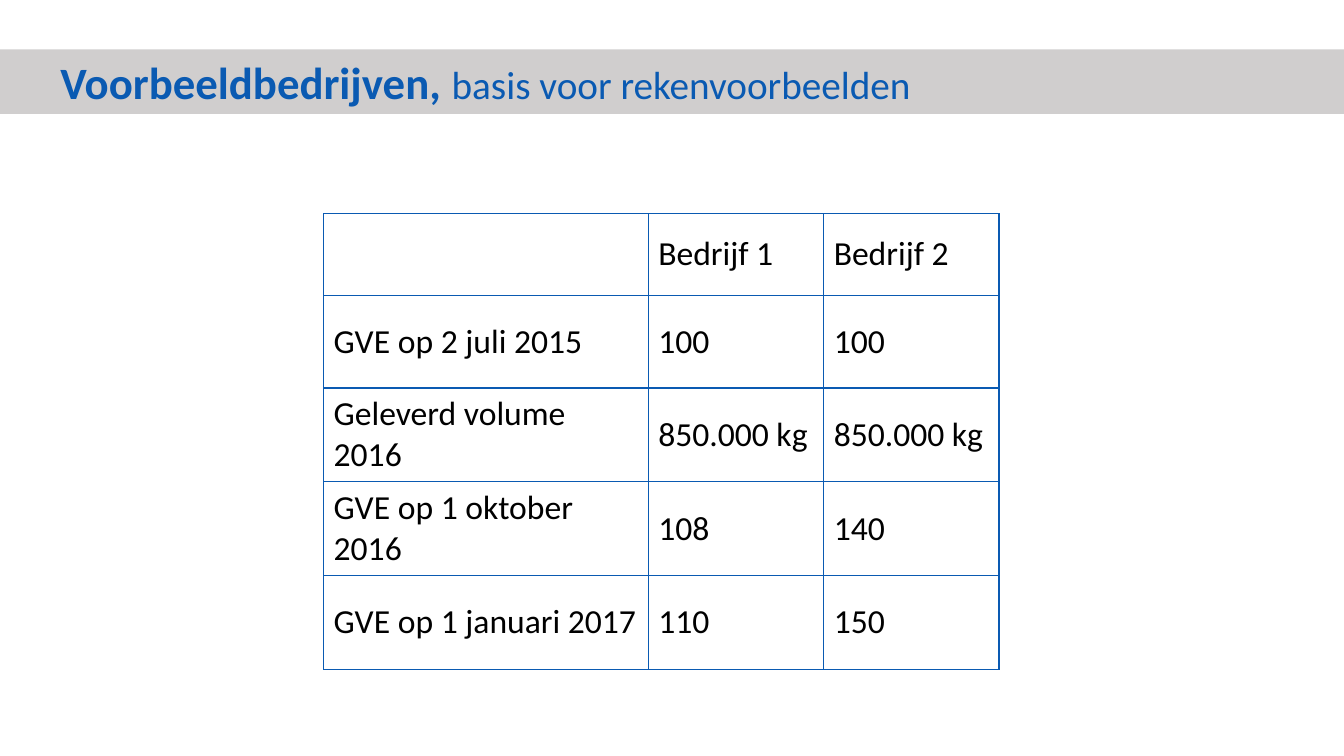
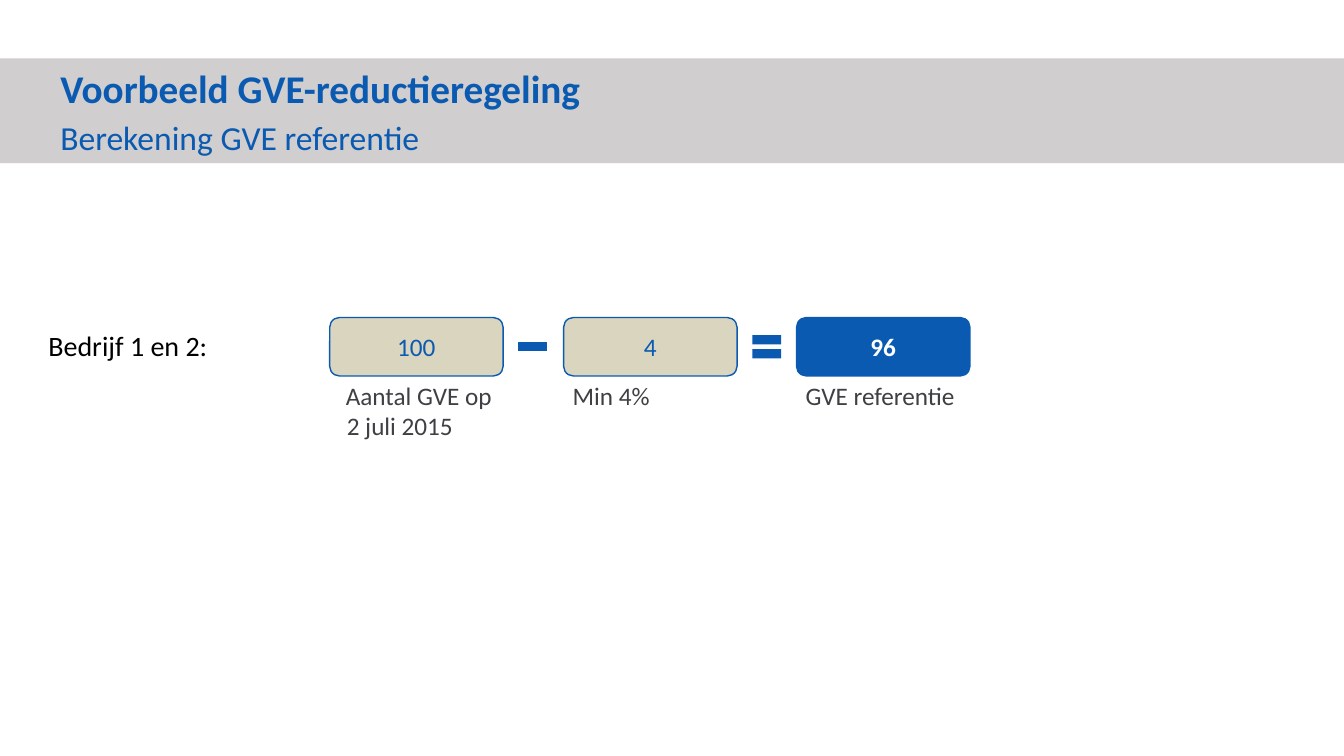
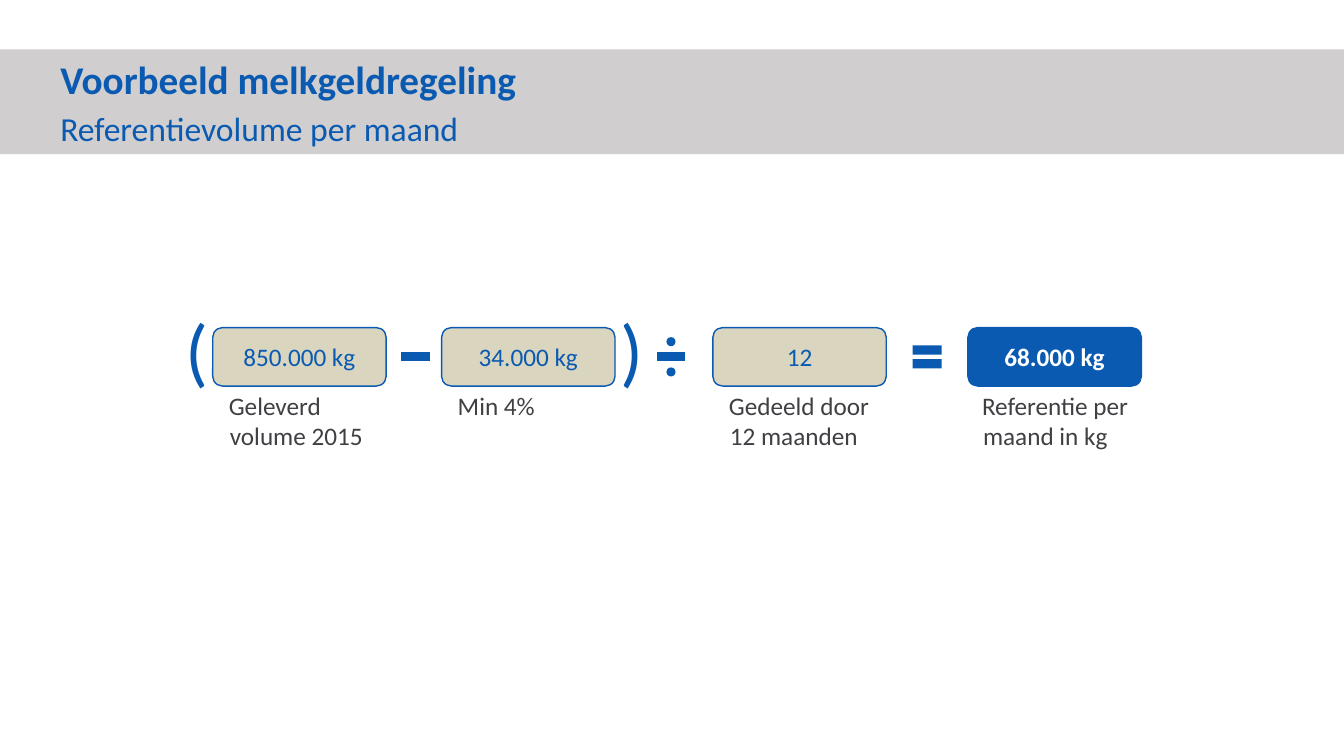
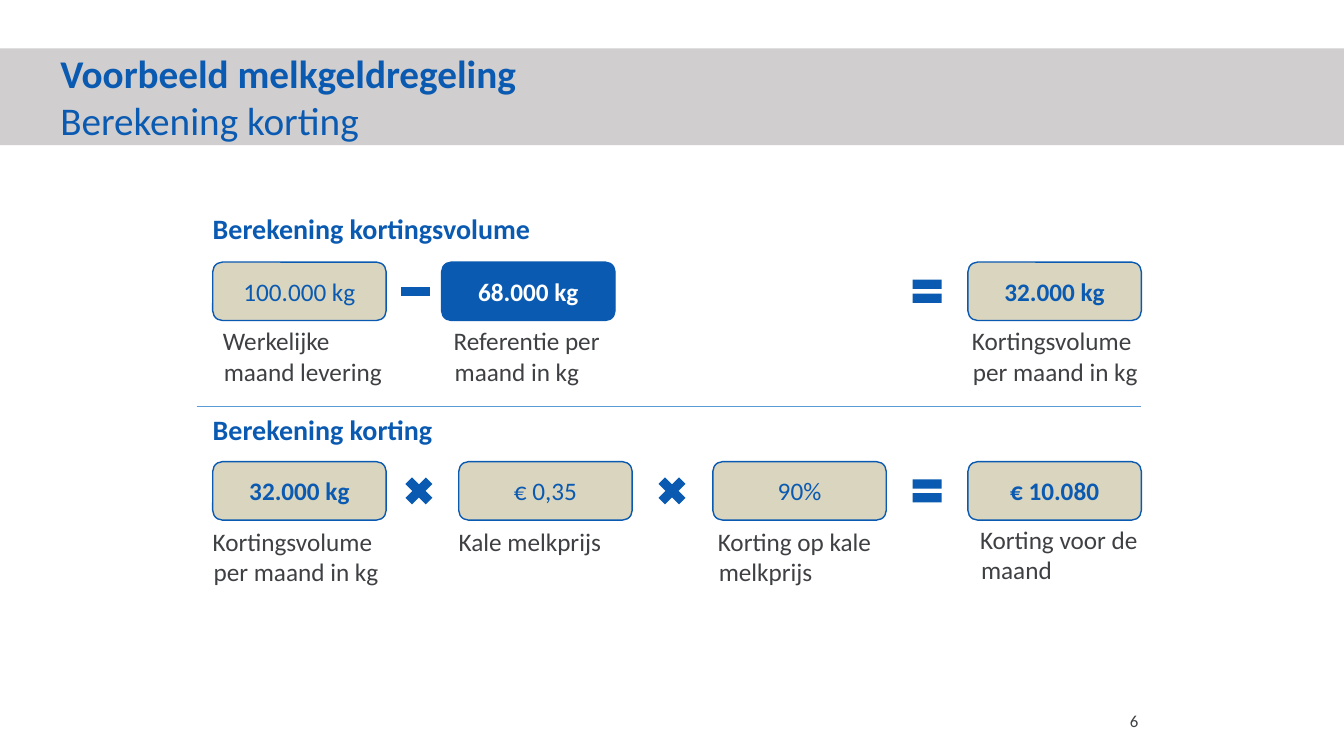
from dataclasses import dataclass

from lxml.etree import SubElement
from pptx import Presentation
from pptx.dml.color import RGBColor
from pptx.enum.shapes import MSO_CONNECTOR, MSO_SHAPE
from pptx.enum.text import MSO_ANCHOR, PP_ALIGN
from pptx.oxml import parse_xml
from pptx.oxml.ns import nsdecls, qn
from pptx.util import Inches, Pt

BLUE = RGBColor(0x0A, 0x5A, 0xB2)
SAND = RGBColor(0xD9, 0xD5, 0xBF)
BAND_GREY = RGBColor(0xD0, 0xCE, 0xCE)
CAPTION_GREY = RGBColor(0x3F, 0x40, 0x43)
DIVIDER_BLUE = RGBColor(0x5B, 0x9B, 0xD5)
BLACK = RGBColor(0, 0, 0)
WHITE = RGBColor(0xFF, 0xFF, 0xFF)
FONT = "Calibri"

SLIDE_WIDTH = 13.33
SLIDE_HEIGHT = 7.5
TERM_WIDTH = 1.72
TERM_HEIGHT = 0.58
SIGN_SIZE = 0.39
SIGN_DROP = (TERM_HEIGHT - SIGN_SIZE) / 2
DOT_SIZE = 0.09
COLUMN_1, COLUMN_2, COLUMN_3, COLUMN_4 = 2.11, 4.38, 7.07, 9.6
EQUALS_LEFT = 9

COMPANY_ROWS = [
    ("", "Bedrijf 1", "Bedrijf 2"),
    ("GVE op 2 juli 2015", "100", "100"),
    ("Geleverd volume 2016", "850.000 kg", "850.000 kg"),
    ("GVE op 1 oktober 2016", "108", "140"),
    ("GVE op 1 januari 2017", "110", "150"),
]
COMPANY_COLUMN_WIDTHS = [3.22, 1.74, 1.74]
COMPANY_ROW_HEIGHTS = [0.81, 0.92, 0.93, 0.93, 0.93]


@dataclass
class Term:
    left: float
    value: str
    caption: str
    caption_shift: float = 0.16
    caption_drop: float = 0.62
    caption_width: float = 1.54
    fill: RGBColor = SAND
    color: RGBColor = BLUE
    bold: bool = False


def add_run(paragraph, text, size, color, bold=False):
    run = paragraph.add_run()
    run.text = text
    run.font.name = FONT
    run.font.size = Pt(size)
    run.font.color.rgb = color
    run.font.bold = bold


def set_insets(frame, horizontal, vertical):
    frame.margin_left = frame.margin_right = Inches(horizontal)
    frame.margin_top = frame.margin_bottom = Inches(vertical)


def set_indent(paragraph, margin, first_line=0):
    properties = paragraph._p.get_or_add_pPr()
    properties.set("marL", str(Inches(margin)))
    properties.set("indent", str(Inches(first_line)))


def add_filled(slide, kind, left, top, width, height, fill, line=None):
    shape = slide.shapes.add_shape(
        kind, Inches(left), Inches(top), Inches(width), Inches(height)
    )
    shape.shadow.inherit = False
    shape.fill.solid()
    shape.fill.fore_color.rgb = fill
    if line is None:
        shape.line.fill.background()
    else:
        shape.line.color.rgb = line
        shape.line.width = Pt(1)
    return shape


def add_text(slide, left, top, width, height, text, size, color, bold=False):
    box = slide.shapes.add_textbox(
        Inches(left), Inches(top), Inches(width), Inches(height)
    )
    box.text_frame.word_wrap = True
    set_insets(box.text_frame, 0, 0)
    paragraph = box.text_frame.paragraphs[0]
    add_run(paragraph, text, size, color, bold)
    return paragraph


def add_title_band(slide, top, height, lines, subtitle_gap=0):
    band = add_filled(
        slide, MSO_SHAPE.RECTANGLE, 0, top, SLIDE_WIDTH, height, BAND_GREY
    )
    frame = band.text_frame
    frame.word_wrap = True
    frame.vertical_anchor = MSO_ANCHOR.MIDDLE
    for index, runs in enumerate(lines):
        paragraph = frame.add_paragraph() if index else frame.paragraphs[0]
        paragraph.alignment = PP_ALIGN.LEFT
        paragraph.space_before = Pt(subtitle_gap if index else 0)
        set_indent(paragraph, 0.5)
        for text, size, bold in runs:
            add_run(paragraph, text, size, BLUE, bold)


def add_term(slide, row_top, term):
    box = add_filled(
        slide, MSO_SHAPE.ROUNDED_RECTANGLE, term.left, row_top,
        TERM_WIDTH, TERM_HEIGHT, term.fill, BLUE,
    )
    set_insets(box.text_frame, 0.04, 0.05)
    box.text_frame.word_wrap = True
    box.text_frame.vertical_anchor = MSO_ANCHOR.MIDDLE
    value = box.text_frame.paragraphs[0]
    value.alignment = PP_ALIGN.CENTER
    add_run(value, term.value, 18, term.color, term.bold)
    caption = add_text(
        slide, term.left + term.caption_shift, row_top + term.caption_drop,
        term.caption_width, 0.61, term.caption, 18, CAPTION_GREY,
    )
    set_indent(caption, 0.01, -0.01)


def add_sign(slide, kind, left, row_top):
    add_filled(slide, kind, left, row_top + SIGN_DROP, SIGN_SIZE, SIGN_SIZE, BLUE)


def add_divide_sign(slide, left, row_top):
    add_sign(slide, MSO_SHAPE.MATH_MINUS, left, row_top)
    for drop in (0, SIGN_SIZE - DOT_SIZE):
        add_filled(
            slide, MSO_SHAPE.OVAL, left + (SIGN_SIZE - DOT_SIZE) / 2,
            row_top + SIGN_DROP + drop, DOT_SIZE, DOT_SIZE, BLUE,
        )


def add_formula(slide, row_top, terms, signs):
    for kind, left in signs:
        add_sign(slide, kind, left, row_top)
    for term in terms:
        add_term(slide, row_top, term)


def add_divider(slide, left, right, top):
    divider = slide.shapes.add_connector(
        MSO_CONNECTOR.STRAIGHT,
        Inches(left), Inches(top), Inches(right), Inches(top),
    )
    divider.line.color.rgb = DIVIDER_BLUE
    divider.line.width = Pt(1)
    SubElement(divider._element.spPr, qn("a:effectLst"))


def set_borders(cell):
    properties = cell._tc.get_or_add_tcPr()
    for index, side in enumerate(("lnL", "lnR", "lnT", "lnB")):
        border = parse_xml(
            f'<a:{side} {nsdecls("a")} w="{Pt(1)}"><a:solidFill>'
            f'<a:srgbClr val="{BLUE}"/></a:solidFill></a:{side}>'
        )
        properties.insert(index, border)


def add_company_table(slide):
    table = slide.shapes.add_table(
        len(COMPANY_ROWS), len(COMPANY_COLUMN_WIDTHS),
        Inches(3.21), Inches(2.12),
        Inches(sum(COMPANY_COLUMN_WIDTHS)), Inches(sum(COMPANY_ROW_HEIGHTS)),
    ).table
    table.first_row = False
    table.horz_banding = False
    for column, width in zip(table.columns, COMPANY_COLUMN_WIDTHS):
        column.width = Inches(width)
    for row, height, texts in zip(table.rows, COMPANY_ROW_HEIGHTS, COMPANY_ROWS):
        row.height = Inches(height)
        for cell, text in zip(row.cells, texts):
            cell.fill.background()
            cell.vertical_anchor = MSO_ANCHOR.MIDDLE
            set_borders(cell)
            if text:
                add_run(cell.text_frame.paragraphs[0], text, 24, BLACK)


def build_companies(slide):
    add_title_band(slide, 0.49, 0.64, [[
        ("Voorbeeldbedrijven, ", 32, True),
        ("basis voor rekenvoorbeelden", 28, False),
    ]])
    add_company_table(slide)


def build_cattle_reference(slide):
    add_title_band(slide, 0.58, 1.04, [
        [("Voorbeeld GVE-reductieregeling", 28, True)],
        [("Berekening GVE referentie", 24, False)],
    ], subtitle_gap=4)
    add_text(slide, 0.48, 3.26, 2.24, 0.34, "Bedrijf 1 en 2:", 20, BLACK)
    add_formula(slide, 3.15, [
        Term(3.27, "100", "Aantal GVE op 2 juli 2015"),
        Term(5.59, "4", "Min 4%", 0.09),
        Term(7.9, "96", "GVE referentie", 0.09,
             fill=BLUE, color=WHITE, bold=True),
    ], [(MSO_SHAPE.MATH_MINUS, 5.09), (MSO_SHAPE.MATH_EQUAL, 7.41)])


def build_monthly_reference(slide):
    row_top = 3.25
    add_title_band(slide, 0.49, 1.04, [
        [("Voorbeeld melkgeldregeling", 28, True)],
        [("Referentievolume per maand", 24, False)],
    ], subtitle_gap=4)
    add_formula(slide, row_top, [
        Term(COLUMN_1, "850.000 kg", "Geleverd volume 2015"),
        Term(COLUMN_2, "34.000 kg", "Min 4%"),
        Term(COLUMN_3, "12", "Gedeeld door 12 maanden"),
        Term(COLUMN_4, "68.000 kg", "Referentie per maand in kg", 0.14,
             fill=BLUE, color=WHITE, bold=True),
    ], [(MSO_SHAPE.MATH_MINUS, 3.93), (MSO_SHAPE.MATH_EQUAL, EQUALS_LEFT)])
    add_divide_sign(slide, 6.46, row_top)
    for bracket, left in (("(", 1.84), (")", 6.15)):
        add_text(slide, left, 3.01, 0.25, 0.91, bracket, 54, BLUE)


def build_discount(slide):
    add_title_band(slide, 0.48, 0.96, [
        [("Voorbeeld melkgeldregeling", 28, True)],
        [("Berekening korting", 28, False)],
    ])
    for heading, top in (
        ("Berekening kortingsvolume", 2.1), ("Berekening korting", 4.09)
    ):
        add_text(slide, COLUMN_1, top, 6.18, 0.34, heading, 20, BLUE, True)
    add_formula(slide, 2.6, [
        Term(COLUMN_1, "100.000 kg", "Werkelijke maand levering",
             0.1, 0.63, 1.63),
        Term(COLUMN_2, "68.000 kg", "Referentie per maand in kg",
             0.12, 0.63, fill=BLUE, color=WHITE, bold=True),
        Term(COLUMN_4, "32.000 kg", "Kortingsvolume per maand in kg",
             0.04, 0.63, 1.76, bold=True),
    ], [(MSO_SHAPE.MATH_MINUS, 3.93), (MSO_SHAPE.MATH_EQUAL, EQUALS_LEFT)])
    add_divider(slide, 1.95, COLUMN_4 + TERM_WIDTH, 4.03)
    add_formula(slide, 4.58, [
        Term(COLUMN_1, "32.000 kg", "Kortingsvolume per maand in kg",
             0, 0.64, 1.76, bold=True),
        Term(4.55, "€ 0,35", "Kale melkprijs", 0, 0.64, 1.76),
        Term(COLUMN_3, "90%", "Korting op kale melkprijs", 0.05, 0.64, 1.76),
        Term(COLUMN_4, "€ 10.080", "Korting voor de maand",
             0.12, 0.62, 1.68, bold=True),
    ], [
        (MSO_SHAPE.MATH_MULTIPLY, 3.96),
        (MSO_SHAPE.MATH_MULTIPLY, 6.47),
        (MSO_SHAPE.MATH_EQUAL, EQUALS_LEFT),
    ])
    page_number = add_text(slide, 10.7, 7.05, 0.59, 0.2, "6", 12, CAPTION_GREY)
    page_number.alignment = PP_ALIGN.RIGHT


def main():
    presentation = Presentation()
    presentation.slide_width = Inches(SLIDE_WIDTH)
    presentation.slide_height = Inches(SLIDE_HEIGHT)
    blank_layout = presentation.slide_layouts[6]
    for build in (
        build_companies,
        build_cattle_reference,
        build_monthly_reference,
        build_discount,
    ):
        build(presentation.slides.add_slide(blank_layout))
    presentation.save("out.pptx")


if __name__ == "__main__":
    main()
